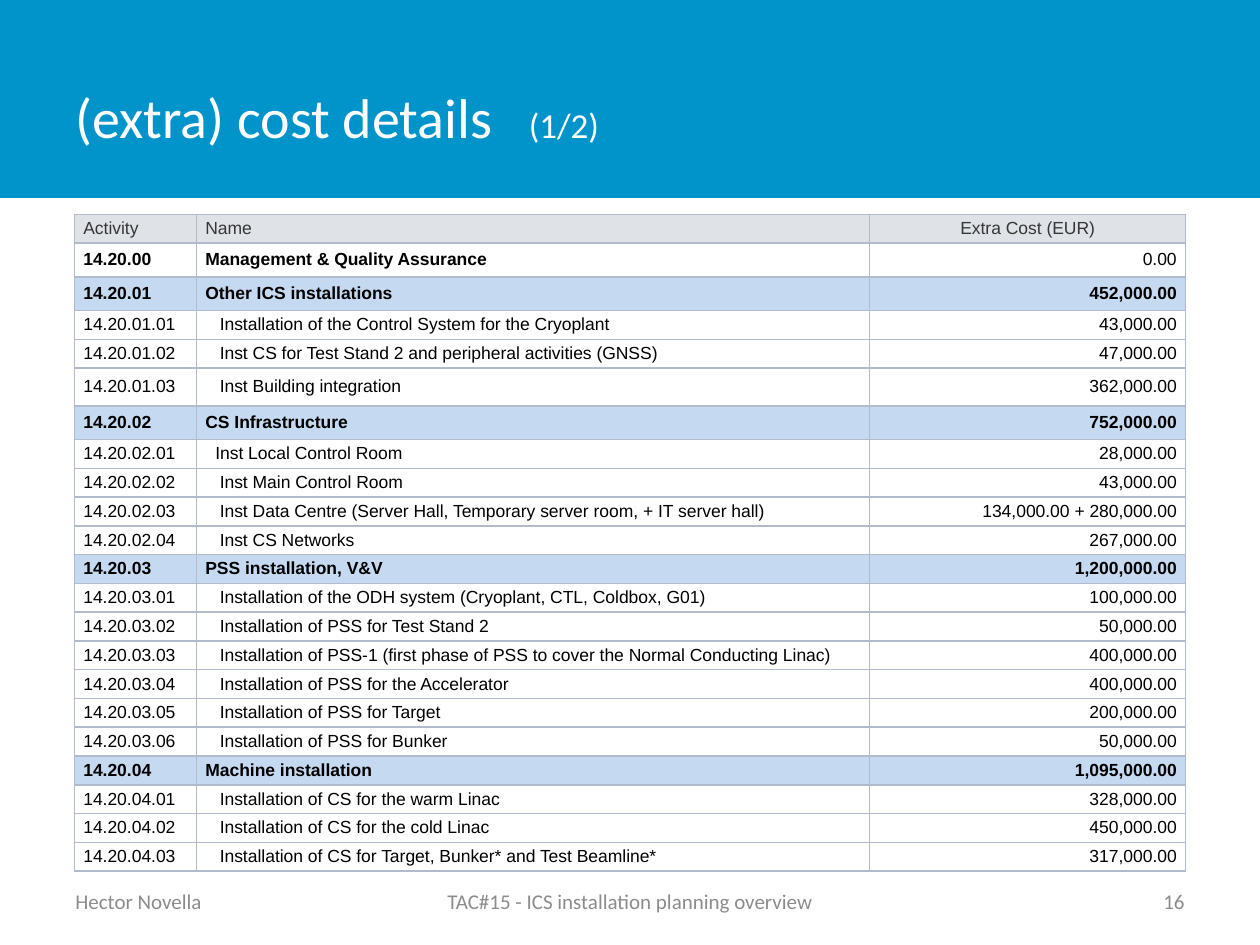
from lxml import etree
from pptx import Presentation
from pptx.dml.color import RGBColor
from pptx.enum.shapes import MSO_SHAPE
from pptx.enum.text import MSO_ANCHOR, PP_ALIGN
from pptx.oxml.ns import qn
from pptx.util import Cm, Pt

RECT = MSO_SHAPE.RECTANGLE
MID = MSO_ANCHOR.MIDDLE
LEFT, MIDDLE, RIGHT = PP_ALIGN.LEFT, PP_ALIGN.CENTER, PP_ALIGN.RIGHT

HUES = {
    "band": "0094CA", "white": "FFFFFF", "foot": "8C8C8C", "head": "DFE3E8",
    "label": "363636", "group": "C5D9F1", "ink": "000000", "edge": "B1BBCC",
}
COLS = [2.46, 13.57, 6.37]
PAD = 0.18
TALL = {"14.20.00": 0.68, "14.20.01": 0.68, "14.20.02": 0.68, "14.20.01.03": 0.76}
DENT = {"14.20.02.01": 0.2}
COSTS = [
    ("Activity", "Name", "Extra Cost (EUR)"),
    ("14.20.00", "Management & Quality Assurance", "0.00"),
    ("14.20.01", "Other ICS installations", "452,000.00"),
    ("14.20.01.01", "Installation of the Control System for the Cryoplant", "43,000.00"),
    ("14.20.01.02", "Inst CS for Test Stand 2 and peripheral activities (GNSS)", "47,000.00"),
    ("14.20.01.03", "Inst Building integration", "362,000.00"),
    ("14.20.02", "CS Infrastructure", "752,000.00"),
    ("14.20.02.01", "Inst Local Control Room", "28,000.00"),
    ("14.20.02.02", "Inst Main Control Room", "43,000.00"),
    ("14.20.02.03", "Inst Data Centre (Server Hall, Temporary server room, + IT server hall)",
     "134,000.00 + 280,000.00"),
    ("14.20.02.04", "Inst CS Networks", "267,000.00"),
    ("14.20.03", "PSS installation, V&V", "1,200,000.00"),
    ("14.20.03.01", "Installation of the ODH system (Cryoplant, CTL, Coldbox, G01)", "100,000.00"),
    ("14.20.03.02", "Installation of PSS for Test Stand 2", "50,000.00"),
    ("14.20.03.03", "Installation of PSS-1 (first phase of PSS to cover the Normal Conducting Linac)",
     "400,000.00"),
    ("14.20.03.04", "Installation of PSS for the Accelerator", "400,000.00"),
    ("14.20.03.05", "Installation of PSS for Target", "200,000.00"),
    ("14.20.03.06", "Installation of PSS for Bunker", "50,000.00"),
    ("14.20.04", "Machine installation", "1,095,000.00"),
    ("14.20.04.01", "Installation of CS for the warm Linac", "328,000.00"),
    ("14.20.04.02", "Installation of CS for the cold Linac", "450,000.00"),
    ("14.20.04.03", "Installation of CS for Target, Bunker* and Test Beamline*", "317,000.00"),
]


def style(font, hue, **looks):
    for key, val in looks.items():
        setattr(font, key, val)
    font.color.rgb = RGBColor.from_string(HUES[hue])


def paint(thing, hue):
    thing.fill.solid()
    thing.fill.fore_color.rgb = RGBColor.from_string(HUES[hue])


def add_text(slide, box):
    frame = slide.shapes.add_textbox(*map(Cm, box)).text_frame
    frame.word_wrap = True
    frame.vertical_anchor = MID
    return frame.paragraphs[0]


def add_title(slide, box):
    x, y, w, h = box
    band = slide.shapes.add_shape(RECT, *map(Cm, box))
    band.shadow.inherit = False
    paint(band, "band")
    band.line.fill.background()
    para = add_text(slide, (x + 1.27, y + 0.76, w - 5.56, h - 0.81))
    tabs = etree.SubElement(para._p.get_or_add_pPr(), qn("a:tabLst"))
    etree.SubElement(tabs, qn("a:tab"), pos=str(Cm(9.14)), algn="l")
    for text, size in (("(extra) cost details\t", 32), ("(1/2)", 20)):
        run = para.add_run()
        run.text = text
        style(run.font, "white", name="Calibri", size=Pt(size))


def add_edges(cell):
    props = cell._tc.get_or_add_tcPr()
    for side in "LRTB":
        line = etree.SubElement(props, qn(f"a:ln{side}"), w=str(Pt(1)))
        fill = etree.SubElement(line, qn("a:solidFill"))
        etree.SubElement(fill, qn("a:srgbClr"), val=HUES["edge"])


def fill_cell(cell, text, align, dent, back, hue, bold):
    looks = {
        "margin_left": Cm(PAD + dent), "margin_right": Cm(PAD),
        "margin_top": 0, "margin_bottom": 0,
        "vertical_anchor": MID, "text": text,
    }
    for key, val in looks.items():
        setattr(cell, key, val)
    add_edges(cell)
    paint(cell, back)
    para = cell.text_frame.paragraphs[0]
    para.alignment = align
    style(para.runs[0].font, hue, name="Arial", size=Pt(10), bold=bold)


def add_costs(slide, box):
    table = slide.shapes.add_table(len(COSTS), len(COLS), *map(Cm, box)).table
    table.first_row = table.horz_banding = False
    for col, wide in zip(table.columns, COLS):
        col.width = Cm(wide)
    for num, (row, texts) in enumerate(zip(table.rows, COSTS)):
        code = texts[0]
        row.height = Cm(TALL.get(code, 0.58))
        head = num == 0
        group = not head and code.count(".") == 2
        none = texts[2] == "0.00"
        back = "head" if head else "group" if group and not none else "white"
        dent = 0 if head or group else DENT.get(code, 0.29)
        for spot, text in enumerate(texts):
            last = spot == 2
            align = LEFT if not last else MIDDLE if head else RIGHT
            fill_cell(row.cells[spot], text, align, dent if spot == 1 else 0, back,
                      "label" if head else "ink", group and not (last and none))


def add_foot(slide, box):
    x, y, w, h = box
    parts = [
        ("Hector Novella", LEFT, 0, 5.92),
        ("TAC#15 - ICS installation planning overview", MIDDLE, (w - 8.05) / 2, 8.05),
        ("16", RIGHT, w - 5.92, 5.92),
    ]
    for text, align, left, wide in parts:
        para = add_text(slide, (x + left, y, wide, h))
        para.alignment = align
        run = para.add_run()
        run.text = text
        style(run.font, "foot", name="Calibri", size=Pt(12))


def main():
    deck = Presentation()
    deck.slide_width, deck.slide_height = Cm(25.4), Cm(19.05)
    slide = deck.slides.add_slide(deck.slide_layouts[6])
    add_title(slide, (0, 0, 25.4, 3.99))
    add_foot(slide, (1.27, 17.65, 22.86, 1.02))
    add_costs(slide, (1.5, 4.32, 22.4, 13.2))
    deck.save("out.pptx")


if __name__ == "__main__":
    main()
